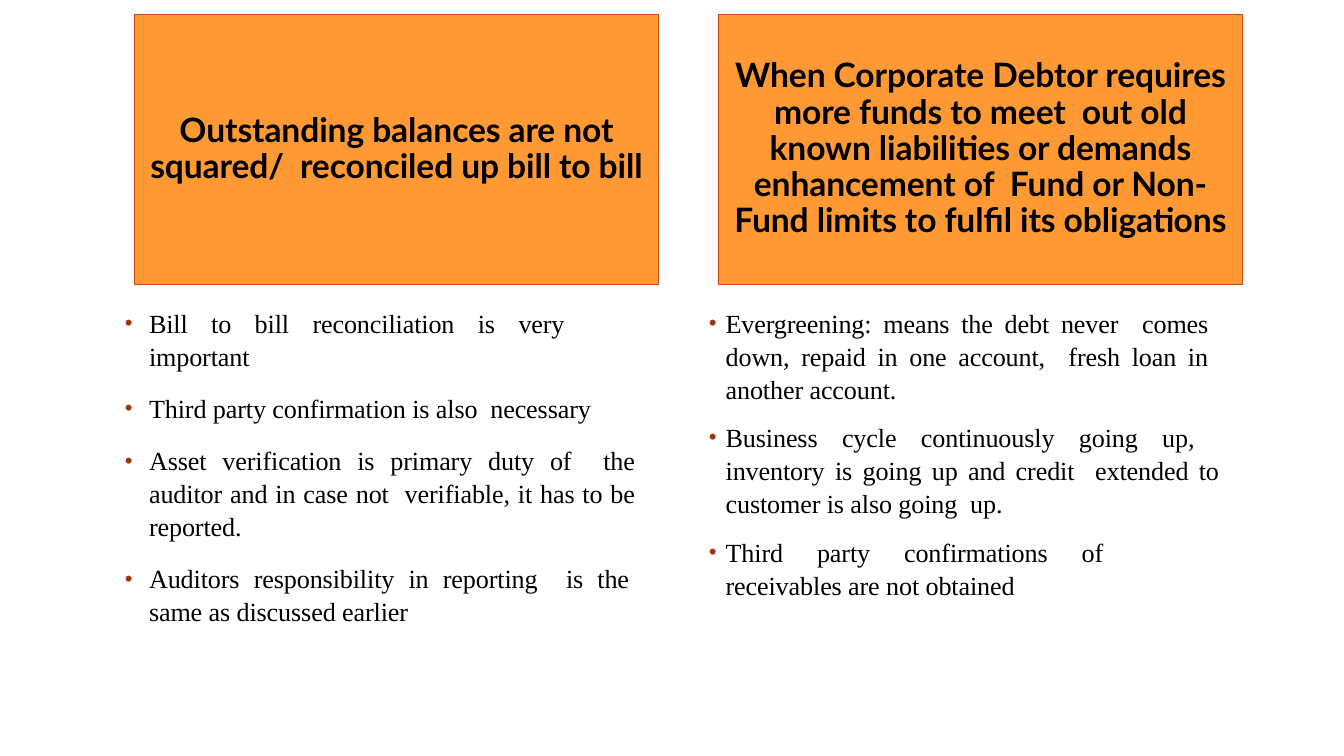
"""Build a slide with two headed columns of audit warning signs."""
from lxml import etree
from pptx import Presentation
from pptx.dml.color import RGBColor
from pptx.enum import shapes, text
from pptx.oxml.ns import qn
from pptx.util import Inches, Pt

THEME = {
    "fill": "FF9933", "line": "D34817", "ink": "000000", "dot": "9E3611",
    "head": ("Lato", 36), "body": ("Times New Roman", 28), "track": -10,
}

# Each point: text, space before (pt), right margin (in)
COLS = [
    {
        "head": "Outstanding balances are not squared/  reconciled up bill to bill",
        "dent": (0.37, -0.36),
        "points": [
            ("Bill to bill reconciliation is very  important", 4.2, 0.7),
            ("Third party confirmation is also  necessary", 20.7, 0),
            ("Asset verification is primary duty of  the auditor and in case not  "
             "verifiable, it has to be reported.", 20.7, 0),
            ("Auditors responsibility in reporting  is the same as discussed earlier",
             20.7, 0.09),
        ],
    },
    {
        "head": "When Corporate Debtor requires more funds to meet  out old known "
                "liabilities or demands enhancement of  Fund or Non-Fund limits "
                "to fulfil its obligations",
        "dent": (0.26, -0.25),
        "points": [
            ("Evergreening: means the debt never  comes down, repaid in one "
             "account,  fresh loan in another account.", 4.2, 0.16),
            ("Business cycle continuously going up,  inventory is going up and "
             "credit  extended to customer is also going  up.", 16.4, 0),
            ("Third party confirmations of  receivables are not obtained", 17.1, 1.22),
        ],
    },
]
LEFT, STEP, WIDE = 2, 8.69, 7.8


def color(key):
    return RGBColor.from_string(THEME[key])


def write(para, words, role, align, before, lead):
    run = para.add_run()
    run.text = words
    run.font._element.set("spc", str(THEME["track"]))
    name, size = THEME[role]
    para.font.name, para.font.size = name, Pt(size)
    para.font.bold = role == "head"
    para.font.color.rgb = color("ink")
    para.alignment = align
    para.space_before, para.line_spacing = Pt(before), lead


def bullet(para, dent, right):
    props = para._p.get_or_add_pPr()
    margin, hang = dent
    for key, size in (("marL", margin), ("marR", right), ("indent", hang)):
        props.set(key, str(Inches(size)))
    tint = etree.Element(qn("a:buClr"))
    etree.SubElement(tint, qn("a:srgbClr"), val=THEME["dot"])
    marks = [
        tint,
        etree.Element(qn("a:buSzPct"), val="85000"),
        etree.Element(qn("a:buFont"), typeface="Arial"),
        etree.Element(qn("a:buChar"), char="•"),
    ]
    spot = props.index(props.find(qn("a:defRPr")))
    props[spot:spot] = marks


def heading(slide, left, words):
    box = slide.shapes.add_shape(
        shapes.MSO_SHAPE.RECTANGLE,
        Inches(left), Inches(0.21), Inches(WIDE), Inches(4.03))
    box.shadow.inherit = False
    box.fill.solid()
    box.fill.fore_color.rgb = color("fill")
    box.line.color.rgb = color("line")
    box.line.width = Pt(1)
    frame = box.text_frame
    frame.word_wrap = True
    frame.vertical_anchor = text.MSO_ANCHOR.MIDDLE
    write(frame.paragraphs[0], words, "head", text.PP_ALIGN.CENTER, 18, 0.9)


def listing(slide, left, points, dent):
    box = slide.shapes.add_textbox(
        Inches(left), Inches(4.5), Inches(WIDE), Inches(5.4))
    frame = box.text_frame
    frame.word_wrap = True
    for i, (words, before, right) in enumerate(points):
        para = frame.add_paragraph() if i else frame.paragraphs[0]
        write(para, words, "body", text.PP_ALIGN.JUSTIFY, before, 1.05)
        bullet(para, dent, right)


def main():
    deck = Presentation()
    deck.slide_width, deck.slide_height = Inches(20), Inches(11.25)
    slide = deck.slides.add_slide(deck.slide_layouts[6])
    for i, col in enumerate(COLS):
        left = LEFT + i * STEP
        heading(slide, left, col["head"])
        listing(slide, left - 0.25, col["points"], col["dent"])
    deck.save("out.pptx")


if __name__ == "__main__":
    main()
